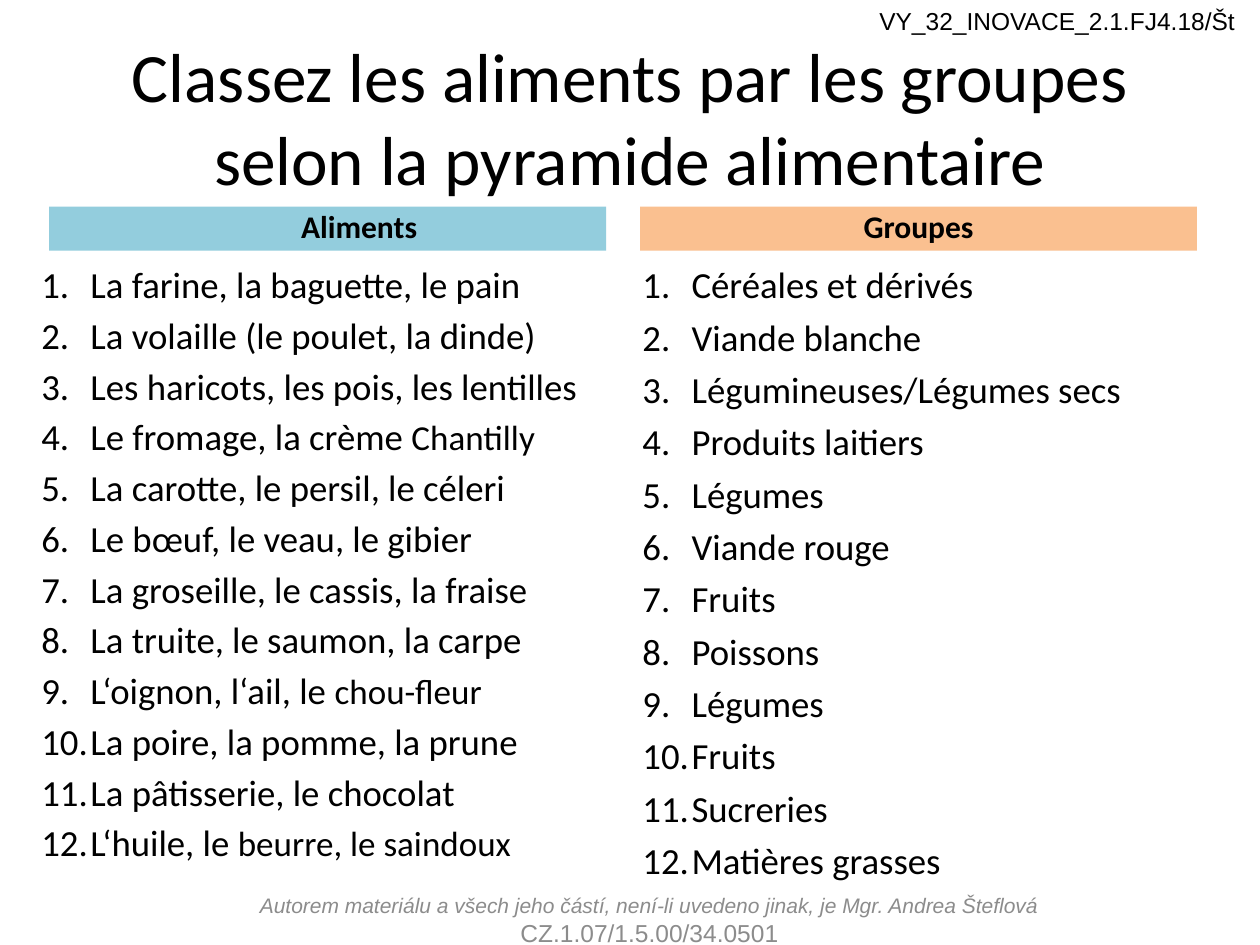
from pptx import Presentation
from pptx.dml.color import RGBColor
from pptx.enum.shapes import MSO_SHAPE
from pptx.enum.text import MSO_ANCHOR, PP_ALIGN
from pptx.util import Inches, Pt
from lxml.etree import SubElement
from pptx.oxml.ns import qn

BLACK = RGBColor(0x00, 0x00, 0x00)
GREY = RGBColor(0x8C, 0x8C, 0x8C)
BLUE = RGBColor(0x93, 0xCD, 0xDD)
ORANGE = RGBColor(0xFA, 0xC0, 0x90)

# Each food is a list of (text, size) runs
FOODS = [
    [("La farine, la baguette, le pain", 21)],
    [("La volaille (le poulet, la dinde)", 21)],
    [("Les haricots, les pois, les lentilles", 21)],
    [("Le fromage, la crème ", 21), ("Chantilly", 20)],
    [("La carotte, le persil, le céleri", 21)],
    [("Le bœuf, le veau, le gibier", 21)],
    [("La groseille, le cassis, la fraise", 21)],
    [("La truite, le saumon, la carpe", 21)],
    [("L‘oignon, l‘ail, le ", 21), ("chou-fleur", 20)],
    [("La poire, la pomme, la prune", 21)],
    [("La pâtisserie, le chocolat", 21)],
    [("L‘huile, le ", 21), ("beurre, le saindoux", 20)],
]
GROUPS = [[(name, 21)] for name in (
    "Céréales et dérivés", "Viande blanche", "Légumineuses/Légumes secs",
    "Produits laitiers", "Légumes", "Viande rouge", "Fruits", "Poissons",
    "Légumes", "Fruits", "Sucreries", "Matières grasses")]


def add_span(para, text, size, font="Calibri", color=BLACK):
    span = para.add_run()
    span.text = text
    span.font.size = Pt(size)
    span.font.name = font
    span.font.color.rgb = color
    return span


def add_box(page, left, top, width, height):
    box = page.shapes.add_textbox(Inches(left), Inches(top), Inches(width), Inches(height))
    box.text_frame.word_wrap = True
    return box.text_frame


deck = Presentation()
deck.slide_width, deck.slide_height = Inches(10), Inches(7.5)
page = deck.slides.add_slide(deck.slide_layouts[5])

# Title
title = page.shapes.title
title.left, title.top = Inches(0.5), Inches(0.3)
title.width, title.height = Inches(9), Inches(1.25)
title.text_frame.vertical_anchor = MSO_ANCHOR.MIDDLE
para = title.text_frame.paragraphs[0]
para.alignment = PP_ALIGN.CENTER
add_span(para, "Classez les aliments par les groupes selon la pyramide alimentaire", 39.6)

# Column headings
for heading, left, fill, indent in (("Aliments", 0.39, BLUE, 0.5), ("Groupes", 5.08, ORANGE, 0)):
    bar = page.shapes.add_shape(MSO_SHAPE.RECTANGLE, Inches(left), Inches(1.64),
                                Inches(4.42), Inches(0.35))
    bar.shadow.inherit = False
    bar.fill.solid()
    bar.fill.fore_color.rgb = fill
    bar.line.fill.background()
    bar.text_frame.vertical_anchor = MSO_ANCHOR.BOTTOM
    para = bar.text_frame.paragraphs[0]
    para.alignment = PP_ALIGN.CENTER
    para._p.get_or_add_pPr().set("marL", str(Inches(indent)))
    add_span(para, heading, 18).font.bold = True

# Numbered lists
for items, left, width, gap in ((FOODS, 0.23, 4.77, 3.8), (GROUPS, 5, 4.69, 4.7)):
    frame = add_box(page, left, 2.03, width, 5)
    for index, item in enumerate(items):
        para = frame.add_paragraph() if index else frame.paragraphs[0]
        para.space_before = Pt(gap)
        properties = para._p.get_or_add_pPr()
        properties.set("marL", str(Inches(0.39)))
        properties.set("indent", str(-Inches(0.39)))
        SubElement(properties, qn("a:buFont"), typeface="+mj-lt")
        SubElement(properties, qn("a:buAutoNum"), type="arabicPeriod")
        for text, size in item:
            add_span(para, text, size)

# Footer
frame = add_box(page, 1.95, 7.1, 6.41, 0.4)
frame.vertical_anchor = MSO_ANCHOR.MIDDLE
para = frame.paragraphs[0]
para.alignment = PP_ALIGN.CENTER
author = "Autorem materiálu a všech jeho částí, není-li uvedeno jinak, je Mgr. Andrea Šteflová"
add_span(para, author, 12, "Arial", GREY).font.italic = True
para = frame.add_paragraph()
para.alignment = PP_ALIGN.CENTER
add_span(para, "CZ.1.07/1.5.00/34.0501", 14, "Arial", GREY)

# Material code
frame = add_box(page, 6.88, 0, 3.12, 0.34)
add_span(frame.paragraphs[0], "VY_32_INOVACE_2.1.FJ4.18/Št", 14, "Arial")

deck.save("out.pptx")
